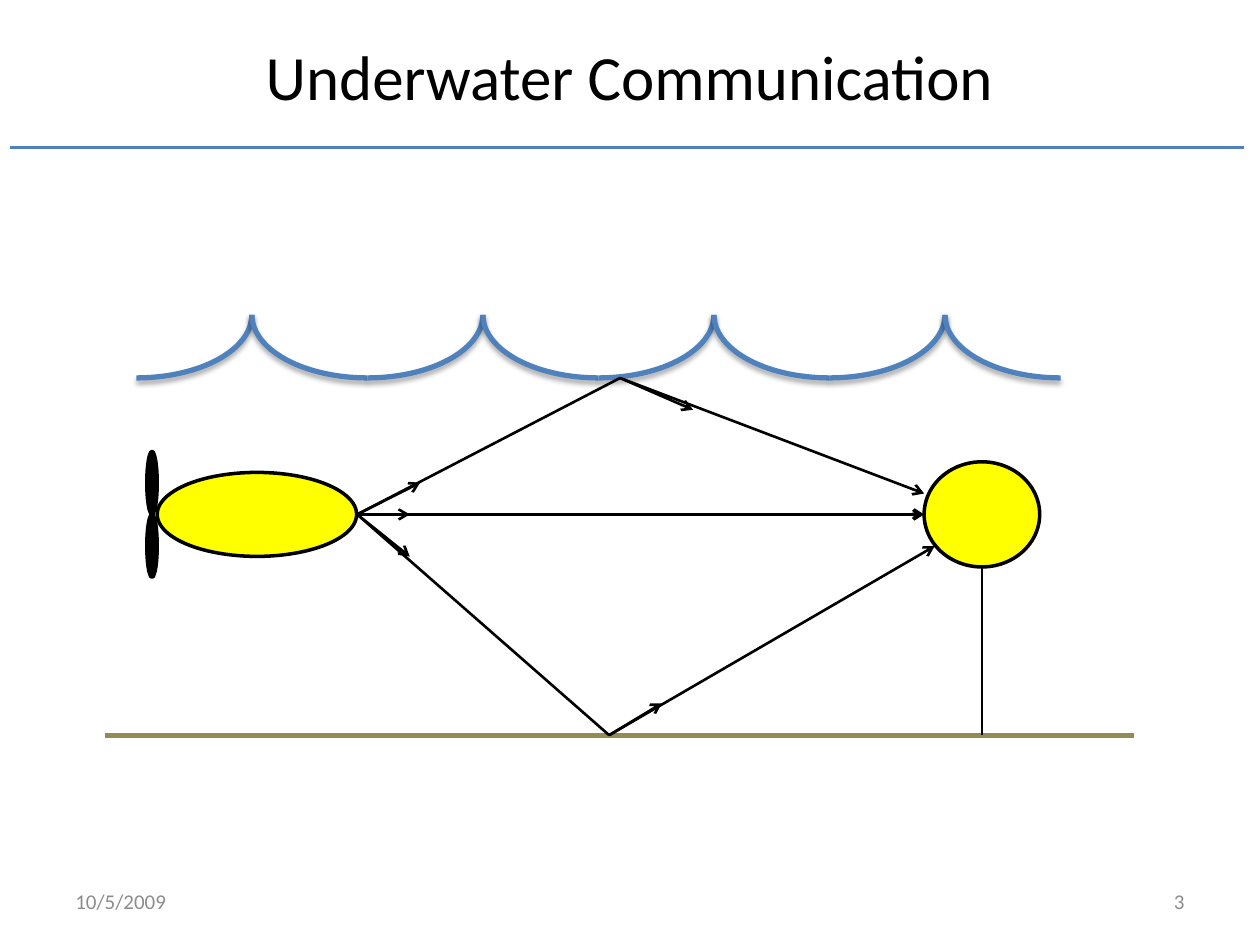
from collections import namedtuple

from lxml.etree import SubElement
from pptx import Presentation
from pptx.dml.color import RGBColor
from pptx.enum.shapes import MSO_CONNECTOR as Link, MSO_SHAPE as Preset
from pptx.enum.text import MSO_ANCHOR as Anchor, PP_ALIGN as Align
from pptx.oxml.ns import qn
from pptx.util import Cm, Pt

COLORS = {
    "ink": "000000",
    "water": "4F81BD",
    "seabed": "948A54",
    "vessel": "FFFF00",
    "muted": "8C8C8C",
}
FONT = "Calibri"
Box = namedtuple("Box", "left top width height")


def rgb(name):
    return RGBColor.from_string(COLORS[name])


def add_text(page, box, text, size, color, align):
    frame = page.shapes.add_textbox(*map(Cm, box)).text_frame
    frame.word_wrap = True
    frame.vertical_anchor = Anchor.MIDDLE
    para = frame.paragraphs[0]
    para.alignment = align
    span = para.add_run()
    span.text = text
    span.font.name = FONT
    span.font.size = Pt(size)
    span.font.color.rgb = rgb(color)


def add_line(page, start, end, color="ink", weight=1.5, arrow=False):
    line = page.shapes.add_connector(Link.STRAIGHT, *map(Cm, (*start, *end)))
    line.line.color.rgb = rgb(color)
    line.line.width = Pt(weight)
    if arrow:
        SubElement(line.line._get_or_add_ln(), qn("a:tailEnd"), type="arrow")
    SubElement(line._element.spPr, qn("a:effectLst"))


def add_ellipse(page, box, fill):
    shape = page.shapes.add_shape(Preset.OVAL, *map(Cm, box))
    shape.shadow.inherit = False
    shape.fill.solid()
    shape.fill.fore_color.rgb = rgb(fill)
    shape.line.color.rgb = rgb("ink")
    shape.line.width = Pt(2)


def add_arc(page, box, mirrored):
    arc = page.shapes.add_shape(Preset.ARC, *map(Cm, box))
    arc.fill.background()
    arc.line.color.rgb = rgb("water")
    arc.line.width = Pt(3)
    properties = arc._element.spPr
    frame = properties.find(qn("a:xfrm"))
    frame.set("flipV", "1")
    if mirrored:
        frame.set("flipH", "1")
    effects = SubElement(properties, qn("a:effectLst"))
    shadow = SubElement(effects, qn("a:outerShdw"), blurRad=str(Pt(3.1)),
                        dist=str(Pt(1.8)), dir="5400000", rotWithShape="0")
    tint = SubElement(shadow, qn("a:srgbClr"), val=COLORS["ink"])
    SubElement(tint, qn("a:alpha"), val="35000")


def add_header(page, box):
    title = Box(box.left + 3.18, box.top, 18.62, 1.52)
    add_text(page, title, "Underwater Communication", 36, "ink", Align.CENTER)
    bottom = box.top + box.height
    add_line(page, (box.left, bottom), (box.left + box.width, bottom), "water", 2)


def add_waves(page, box, crests=4):
    pitch = box.width / crests
    for crest in range(crests):
        for side in (0, 1):
            left = box.left + (crest + side - 0.5) * pitch
            arc = Box(left, box.top - box.height, pitch, 2 * box.height)
            add_arc(page, arc, mirrored=side == 1)


def add_vehicle(page, box):
    blade_width, blade_height = 0.21, box.height / 2
    hull = Box(box.left + blade_width, box.top + box.height / 6,
               box.width - blade_width, box.height * 2 / 3)
    add_ellipse(page, hull, "vessel")
    for blade in range(2):
        top = box.top + blade * blade_height
        add_ellipse(page, Box(box.left, top, blade_width, blade_height), "ink")


def add_buoy(page, box, float_height):
    add_ellipse(page, box._replace(height=float_height), "vessel")
    middle = box.left + box.width / 2
    add_line(page, (middle, box.top + float_height), (middle, box.top + box.height))


def add_signals(page, box):
    source = (0, 2.75)
    surface = (5.3, 0)
    seabed = (5.08, box.height)
    target = (box.width, 2.75)
    paths = [
        (source, (1.06, 2.75), 1.5, True),
        (source, target, 2, True),
        (source, (1.06, 3.6), 1.5, True),
        (seabed, (6.14, 6.56), 1.5, True),
        (source, seabed, 1.5, False),
        (seabed, (11.64, 3.39), 1.5, True),
        (source, (1.27, 2.11), 1.5, True),
        (surface, (6.77, 0.64), 1.5, True),
        (source, surface, 1.5, False),
        (surface, (box.width, 2.33), 1.5, True),
    ]
    for start, end, weight, arrow in paths:
        ends = [(box.left + x, box.top + y) for x, y in (start, end)]
        add_line(page, *ends, weight=weight, arrow=arrow)


def add_footer(page, box):
    width = 5.92
    date = box._replace(width=width)
    number = date._replace(left=box.left + box.width - width)
    add_text(page, date, "10/5/2009", 12, "muted", Align.LEFT)
    add_text(page, number, "3", 12, "muted", Align.RIGHT)


def main():
    deck = Presentation()
    deck.slide_width, deck.slide_height = Cm(25.4), Cm(19.05)
    page = deck.slides.add_slide(deck.slide_layouts[6])
    add_header(page, Box(0.2, 0.76, 24.87, 2.21))
    add_vehicle(page, Box(2.96, 9.1, 4.23, 2.54))
    add_waves(page, Box(2.75, 6.35, 18.63, 1.27))
    add_line(page, (2.12, 14.82), (22.86, 14.82), "seabed", 3)
    add_buoy(page, Box(18.63, 9.31, 2.33, 5.51), 2.12)
    add_signals(page, Box(7.2, 7.62, 11.43, 7.2))
    add_footer(page, Box(1.27, 17.66, 22.86, 1.01))
    deck.save("out.pptx")


if __name__ == "__main__":
    main()
